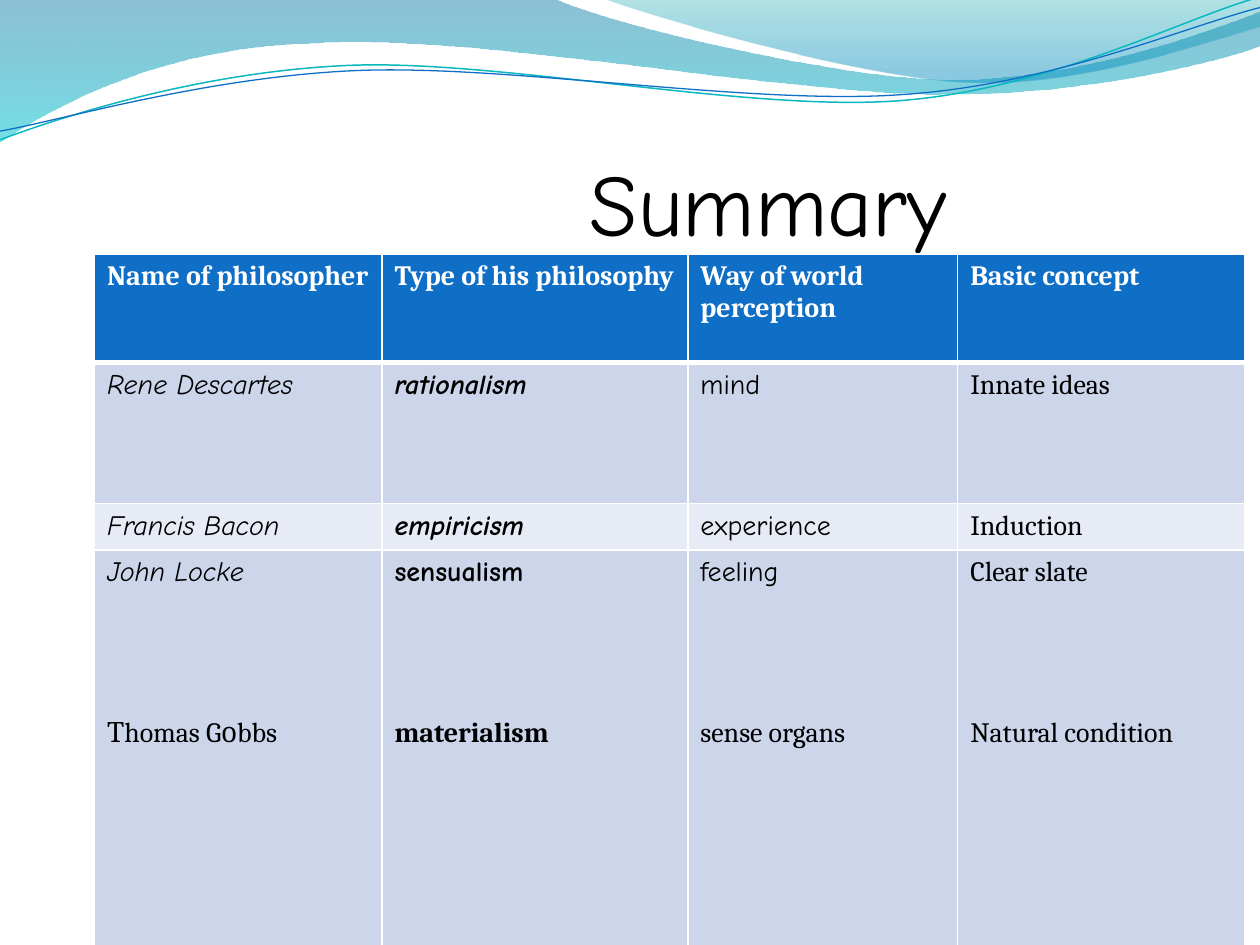
from lxml.etree import SubElement
from pptx import Presentation
from pptx.dml.color import RGBColor
from pptx.enum.text import MSO_ANCHOR
from pptx.oxml import parse_xml
from pptx.oxml.ns import nsdecls, qn
from pptx.util import Pt

THEME = {
    "black": "000000", "white": "FFFFFF", "header": "0F6FC6",
    "bands": ("CCD5EA", "E7EBF5"),
    "serif": "Cambria", "hand": "Comic Neue",
    "title_size": 50, "table_size": 16,
}

TITLE = "Summary"
HEADER = ["Name of philosopher", "Type of his philosophy",
          "Way of world perception", "Basic concept"]
# Each cell is a list of (text, font, bold, italic) paragraphs
ROWS = [
    [[("Rene Descartes", "hand", False, True)],
     [("rationalism", "hand", True, True)],
     [("mind", "hand", False, False)],
     [("Innate ideas", "serif", False, False)]],
    [[("Francis Bacon", "hand", False, True)],
     [("empiricism", "hand", True, True)],
     [("experience", "hand", False, False)],
     [("Induction", "serif", False, False)]],
    [[("John Locke", "hand", False, True), ("Тhomas Gоbbs", "serif", False, False)],
     [("sensualism", "hand", True, False), ("materialism", "serif", True, False)],
     [("feeling", "hand", False, False), ("sense organs", "serif", False, False)],
     [("Clear slate", "serif", False, False), ("Natural condition", "serif", False, False)]],
]
TABLE_LEFT, TABLE_TOP = 54, 145.2
COLUMN_WIDTHS = [164.3, 174.8, 154.2, 164.3]
ROW_HEIGHTS = [62, 80.6, 25.2, 245.5]
PARAGRAPH_GAP = 73.6

# Outlines: a pair is a straight step, a triple of pairs is a Bezier curve.
# Gradient stops are (position, colour, opacity in percent).
WAVES = [
    {"start": (0, 0),
     "steps": [(316.8, -0.7),
               ((342.7, 12.2), (478.1, 45.4), (545.8, 45.4)),
               ((614.2, 45.4), (689.8, 18.7), (720, 6.5)),
               (720.7, 25.9),
               ((707.8, 31.7), (626.4, 54.7), (537.1, 54)),
               ((447.8, 54), (275, 20.2), (185, 24.5)),
               ((92.9, 25.9), (33.1, 59.8), (-0.7, 81.4))],
     "stops": [(0, "0074A1", 45), (1, "00C6CF", 55)]},
    {"start": (344.9, -0.7),
     "steps": [((366.5, 7.9), (491, 44.6), (553.7, 46.8)),
               ((616.3, 49.7), (691.9, 23), (720, 15.1)),
               (720, 0)],
     "stops": [(0, "00A1A9", 30), (0.8, "008BBF", 45)]},
    {"start": (0, 79.9),
     "steps": [((34.6, 67), (113.8, 41), (199.4, 37.4)),
               ((284.4, 33.8), (427, 64.1), (513.4, 57.6)),
               ((599.8, 51.1), (675.4, 10.8), (718.6, -1.4))],
     "line": ("0AB8BF", 0.85)},
    {"start": (0, 74.9),
     "steps": [((33.8, 69.1), (118.1, 43.9), (203.8, 40.3)),
               ((290.2, 36.7), (429.8, 60.5), (516.2, 54)),
               ((601.9, 48.2), (677.5, 15.1), (720, 4.3))],
     "line": ("0F6FC6", 0.75)},
]


def rgb(value):
    return RGBColor.from_string(value)


def is_curve(step):
    return len(step) == 3


def bend_curves(shape, steps):
    """Turn the three straight segments of each curve step into one Bezier."""
    outline = shape._element.spPr.find(".//" + qn("a:path"))
    segments = iter(outline.findall(qn("a:lnTo")))
    for step in steps:
        first = next(segments)
        if not is_curve(step):
            continue
        curve = parse_xml(f'<a:cubicBezTo {nsdecls("a")}/>')
        first.addprevious(curve)
        for segment in (first, next(segments), next(segments)):
            curve.append(segment[0])
            outline.remove(segment)


def add_wave(slide, wave):
    points = [wave["start"]]
    for step in wave["steps"]:
        points.extend(step if is_curve(step) else [step])
    points = [(Pt(x), Pt(y)) for x, y in points]
    builder = slide.shapes.build_freeform(*points[0], scale=1.0)
    builder.add_line_segments(points[1:], close="stops" in wave)
    shape = builder.convert_to_shape()
    bend_curves(shape, wave["steps"])
    shape.shadow.inherit = False
    if "line" in wave:
        color, width = wave["line"]
        shape.fill.background()
        shape.line.color.rgb = rgb(color)
        shape.line.width = Pt(width)
        return
    shape.line.fill.background()
    shape.fill.gradient()
    shape.fill.gradient_angle = 270
    for stop, (position, color, _) in zip(shape.fill.gradient_stops, wave["stops"]):
        stop.position = position
        stop.color.rgb = rgb(color)
    color_elements = shape._element.spPr.findall(".//" + qn("a:gs") + "/" + qn("a:srgbClr"))
    for element, (_, _, opacity) in zip(color_elements, wave["stops"]):
        SubElement(element, qn("a:alpha"), val=str(opacity * 1000))


def write_paragraph(paragraph, text, size, color, font, bold=False, italic=False):
    run = paragraph.add_run()
    run.text = text
    run.font.color.rgb = rgb(THEME[color])
    formats = {"size": Pt(size), "name": THEME[font], "bold": bold, "italic": italic}
    for name, value in formats.items():
        setattr(run.font, name, value)


def set_borders(cell, widths):
    properties = cell._tc.get_or_add_tcPr()
    for index, (side, width) in enumerate(widths.items()):
        properties.insert(index, parse_xml(
            f'<a:ln{side} {nsdecls("a")} w="{Pt(width)}"><a:solidFill>'
            f'<a:srgbClr val="{THEME["white"]}"/></a:solidFill></a:ln{side}>'))


def add_title(slide):
    box = slide.shapes.add_textbox(Pt(36), Pt(55), Pt(648), Pt(90))
    frame = box.text_frame
    formats = {"word_wrap": True, "vertical_anchor": MSO_ANCHOR.BOTTOM,
               "margin_left": Pt(301), "margin_top": Pt(3.6),
               "margin_right": 0, "margin_bottom": 0}
    for name, value in formats.items():
        setattr(frame, name, value)
    write_paragraph(frame.paragraphs[0], TITLE, THEME["title_size"], "black", "hand")


def add_summary_table(slide):
    contents = [[[(text, "serif", True, False)] for text in HEADER]] + ROWS
    table = slide.shapes.add_table(
        len(contents), len(HEADER), Pt(TABLE_LEFT), Pt(TABLE_TOP),
        Pt(sum(COLUMN_WIDTHS)), Pt(sum(ROW_HEIGHTS))).table
    table.horz_banding = False
    for column, width in zip(table.columns, COLUMN_WIDTHS):
        column.width = Pt(width)
    for row_index, (row, height) in enumerate(zip(contents, ROW_HEIGHTS)):
        table.rows[row_index].height = Pt(height)
        is_header = row_index == 0
        fill = THEME["header"] if is_header else THEME["bands"][(row_index - 1) % 2]
        for column_index, entries in enumerate(row):
            cell = table.cell(row_index, column_index)
            cell.fill.solid()
            cell.fill.fore_color.rgb = rgb(fill)
            set_borders(cell, {"L": 1, "R": 1, "T": 3 if row_index == 1 else 1,
                               "B": 3 if is_header else 1})
            for position, (text, font, bold, italic) in enumerate(entries):
                paragraph = cell.text_frame.paragraphs[0]
                if position:
                    paragraph = cell.text_frame.add_paragraph()
                    paragraph.space_before = Pt(PARAGRAPH_GAP)
                write_paragraph(paragraph, text, THEME["table_size"],
                                "white" if is_header else "black", font, bold, italic)


def main():
    presentation = Presentation()
    presentation.slide_width, presentation.slide_height = Pt(720), Pt(540)
    slide = presentation.slides.add_slide(presentation.slide_layouts[6])
    # Decorative waves along the top
    for wave in WAVES:
        add_wave(slide, wave)
    # Title and table of philosophers
    add_title(slide)
    add_summary_table(slide)
    presentation.save("out.pptx")


if __name__ == "__main__":
    main()
